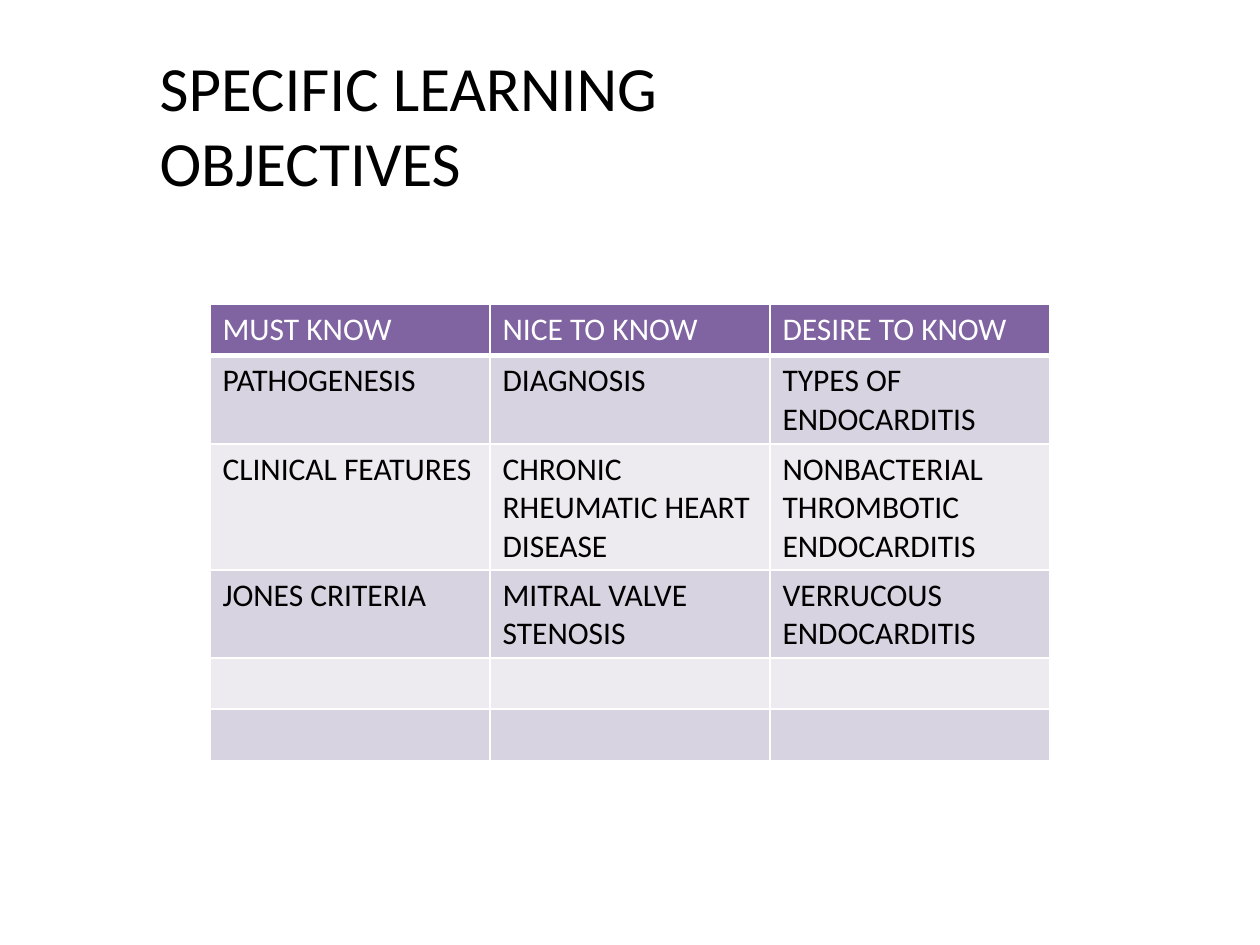
"""Build the slide with the table of specific learning objectives."""
import pptx
import pptx.dml.color
import pptx.enum.text
import pptx.oxml
import pptx.oxml.ns
import pptx.util

Pt = pptx.util.Pt


def add_run(p, text, size, color):
    r = p.add_run()
    r.text = text
    r.font.name = "Calibri"
    r.font.size = Pt(size)
    r.font.color.rgb = rgb(color)


def rgb(color):
    return pptx.dml.color.RGBColor.from_string(color)


prs = pptx.Presentation()
prs.slide_width = Pt(720)
prs.slide_height = Pt(540)
s = prs.slides.add_slide(prs.slide_layouts[5])

title = s.shapes.title
title.left, title.top, title.width, title.height = Pt(84), Pt(24), Pt(348), Pt(94.5)
tf = title.text_frame
tf.word_wrap = True
tf.auto_size = pptx.enum.text.MSO_AUTO_SIZE.SHAPE_TO_FIT_TEXT
tf.vertical_anchor = pptx.enum.text.MSO_ANCHOR.TOP
p = tf.paragraphs[0]
p.alignment = pptx.enum.text.PP_ALIGN.LEFT
add_run(p, "SPECIFIC LEARNING OBJECTIVES", 36, "000000")

rows = [
    ("MUST KNOW", "NICE TO KNOW", "DESIRE TO KNOW"),
    ("PATHOGENESIS", "DIAGNOSIS", "TYPES OF ENDOCARDITIS"),
    ("CLINICAL FEATURES", "CHRONIC RHEUMATIC HEART DISEASE",
     "NONBACTERIAL THROMBOTIC ENDOCARDITIS"),
    ("JONES CRITERIA", "MITRAL VALVE STENOSIS", "VERRUCOUS ENDOCARDITIS"),
    ("", "", ""),
    ("", "", ""),
]
row_height = 29.2
table = s.shapes.add_table(len(rows), 3, Pt(120), Pt(174), Pt(480),
                           Pt(row_height * len(rows))).table
for col in table.columns:
    col.width = Pt(160)

for i, texts in enumerate(rows):
    table.rows[i].height = Pt(row_height)
    header = i == 0
    fill = "8064A2" if header else ("EDEAF0", "D8D3E0")[i % 2]
    for j, text in enumerate(texts):
        cell = table.cell(i, j)
        tcPr = cell._tc.get_or_add_tcPr()
        for side in "LRTB":
            width = Pt(3 if header and side == "B" else 1)
            tcPr.append(pptx.oxml.parse_xml(
                f'<a:ln{side} {pptx.oxml.ns.nsdecls("a")} w="{width}"><a:solidFill>'
                f'<a:srgbClr val="FFFFFF"/></a:solidFill></a:ln{side}>'))
        cell.fill.solid()
        cell.fill.fore_color.rgb = rgb(fill)
        p = cell.text_frame.paragraphs[0]
        p.font.size = Pt(18)
        p.font.bold = False
        if text:
            add_run(p, text, 18, "FFFFFF" if header else "000000")
            p.runs[0].font.bold = False

prs.save("out.pptx")
